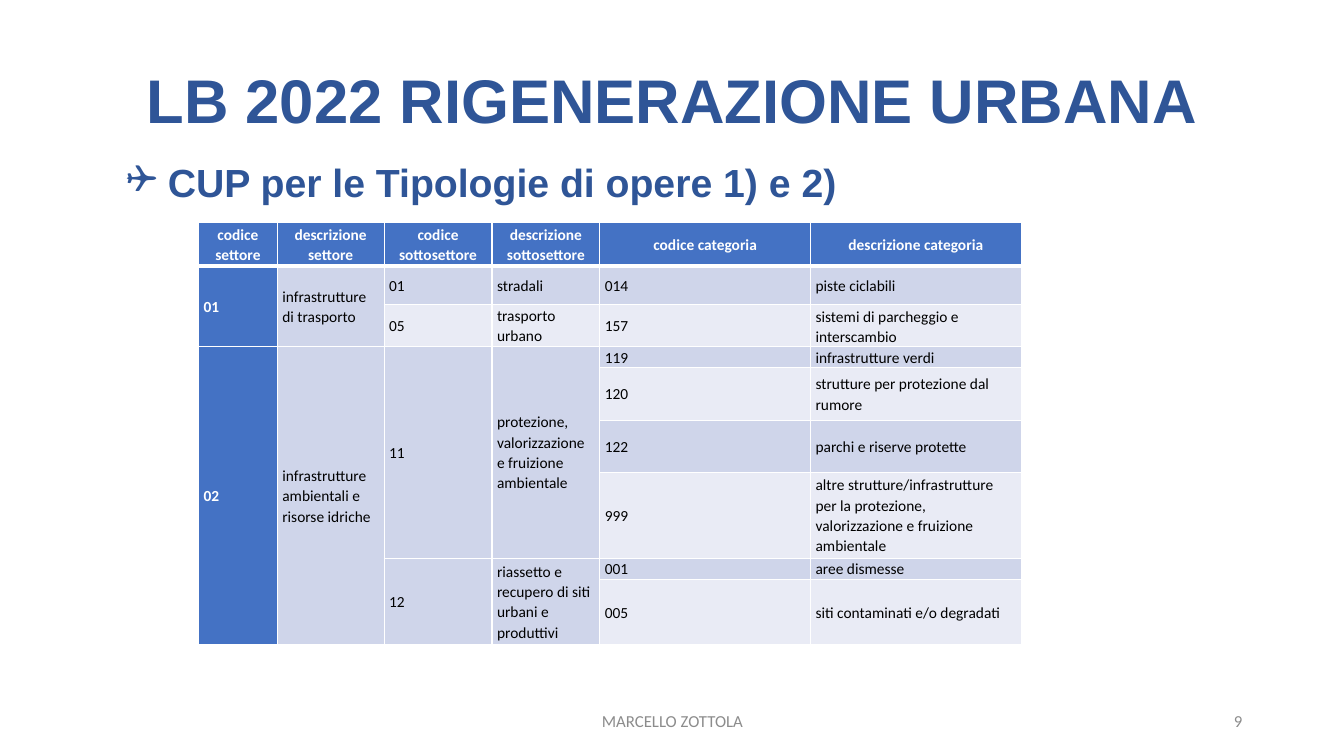
from lxml.etree import SubElement
from pptx import Presentation
from pptx.dml.color import RGBColor
from pptx.enum.text import MSO_ANCHOR, PP_ALIGN
from pptx.oxml.ns import qn
from pptx.util import Emu, Pt

EMU_PER_PX = 9144  # 100 px to the inch
TITLE_BLUE, CELL_BLUE = "2F5597", "4472C4"
BAND_DARK, BAND_LIGHT = "CFD5EA", "E9EBF5"
WHITE, BLACK, GREY = "FFFFFF", "000000", "8C8C8C"

COLUMN_WIDTHS = [78, 106, 107, 107, 209, 209]
ROW_HEIGHTS = [43, 38, 42, 21, 52, 52, 85, 21, 65]
# None continues the cell above
ROWS = [
    ["codice settore", "descrizione settore", "codice sottosettore",
     "descrizione sottosettore", "codice categoria", "descrizione categoria"],
    ["01", "infrastrutture di trasporto", "01", "stradali", "014", "piste ciclabili"],
    [None, None, "05", "trasporto urbano", "157", "sistemi di parcheggio e interscambio"],
    ["02", "infrastrutture ambientali e risorse idriche", "11",
     "protezione, valorizzazione e fruizione ambientale", "119", "infrastrutture verdi"],
    [None, None, None, None, "120", "strutture per protezione dal rumore"],
    [None, None, None, None, "122", "parchi e riserve protette"],
    [None, None, None, None, "999",
     "altre strutture/infrastrutture per la protezione, valorizzazione e fruizione ambientale"],
    [None, None, "12", "riassetto e recupero di siti urbani e produttivi", "001", "aree dismesse"],
    [None, None, None, None, "005", "siti contaminati e/o degradati"],
]


def px(length):
    return Emu(length * EMU_PER_PX)


def color(hex_string):
    return RGBColor.from_string(hex_string)


def place(box, left, top, width, height):
    box.left, box.top, box.width, box.height = map(px, (left, top, width, height))


def write(frame, text, size, font, hex_string, bold=False, align=PP_ALIGN.LEFT, spacing=1.0):
    """Set one formatted paragraph and return it."""
    frame.text = text
    frame.word_wrap = True
    para = frame.paragraphs[0]
    para.alignment = align
    para.line_spacing = spacing
    for span in para.runs:
        span.font.size = Pt(size)
        span.font.name = font
        span.font.bold = bold
        span.font.color.rgb = color(hex_string)
    return para


def add_bullet(para, character, indent):
    properties = para._p.get_or_add_pPr()
    properties.set("marL", str(px(indent)))
    properties.set("indent", str(-px(indent)))
    SubElement(properties, qn("a:buFont"), typeface="Wingdings")
    SubElement(properties, qn("a:buChar"), char=character)


def add_footer(page, text, left, width, align):
    box = page.shapes.add_textbox(px(left), px(695), px(width), px(40))
    box.text_frame.vertical_anchor = MSO_ANCHOR.MIDDLE
    write(box.text_frame, text, 12, "Calibri", GREY, align=align)


def add_borders(cell, row):
    properties = cell._tc.get_or_add_tcPr()
    heavy_side = {0: "B", 1: "T"}.get(row)
    for side in "LRTB":
        width = Pt(3 if side == heavy_side else 1)
        line = SubElement(properties, qn(f"a:ln{side}"), w=str(width))
        fill = SubElement(line, qn("a:solidFill"))
        SubElement(fill, qn("a:srgbClr"), val=WHITE)


def format_cell(cell, row, column):
    add_borders(cell, row)
    heading = row == 0 or column == 0
    band = BAND_DARK if row % 2 else BAND_LIGHT
    cell.fill.solid()
    cell.fill.fore_color.rgb = color(CELL_BLUE if heading else band)
    cell.margin_left = cell.margin_right = px(5)
    cell.margin_top = cell.margin_bottom = 0
    cell.vertical_anchor = MSO_ANCHOR.MIDDLE
    write(cell.text_frame, ROWS[row][column] or "", 11, "Calibri",
          WHITE if heading else BLACK, heading,
          PP_ALIGN.LEFT if row else PP_ALIGN.CENTER, 1.07)


def merge_down(table, row, column):
    """Merge a cell with the continued cells under it."""
    last = row
    while last + 1 < len(ROWS) and ROWS[last + 1][column] is None:
        last += 1
    if last > row:
        table.cell(row, column).merge(table.cell(last, column))


def add_code_table(page, left, top):
    table = page.shapes.add_table(
        len(ROWS), len(COLUMN_WIDTHS), px(left), px(top),
        px(sum(COLUMN_WIDTHS)), px(sum(ROW_HEIGHTS))).table
    for column, width in zip(table.columns, COLUMN_WIDTHS):
        column.width = px(width)
    for row, height in zip(table.rows, ROW_HEIGHTS):
        row.height = px(height)
    for row, texts in enumerate(ROWS):
        for column, text in enumerate(texts):
            format_cell(table.cell(row, column), row, column)
            if text is not None:
                merge_down(table, row, column)
    table.cell(2, 5).vertical_anchor = MSO_ANCHOR.BOTTOM


def main():
    deck = Presentation()
    deck.slide_width, deck.slide_height = px(1333), px(750)
    page = deck.slides.add_slide(deck.slide_layouts[1])

    title, body = page.placeholders
    place(title, 92, 40, 1150, 126)
    title.text_frame.vertical_anchor = MSO_ANCHOR.MIDDLE
    write(title.text_frame, "LB 2022 RIGENERAZIONE URBANA", 44, "Arial", TITLE_BLUE,
          True, PP_ALIGN.CENTER, 0.9)

    place(body, 115, 157, 1126, 484)
    para = write(body.text_frame, " CUP per le Tipologie di opere 1) e 2)", 28, "Arial",
                 TITLE_BLUE, True, spacing=0.9)
    para.space_before = Pt(10)
    add_bullet(para, "❑", 25)

    add_footer(page, "MARCELLO ZOTTOLA", 442, 450, PP_ALIGN.CENTER)
    add_footer(page, "9", 942, 300, PP_ALIGN.RIGHT)
    add_code_table(page, 197, 221)
    deck.save("out.pptx")


if __name__ == "__main__":
    main()
